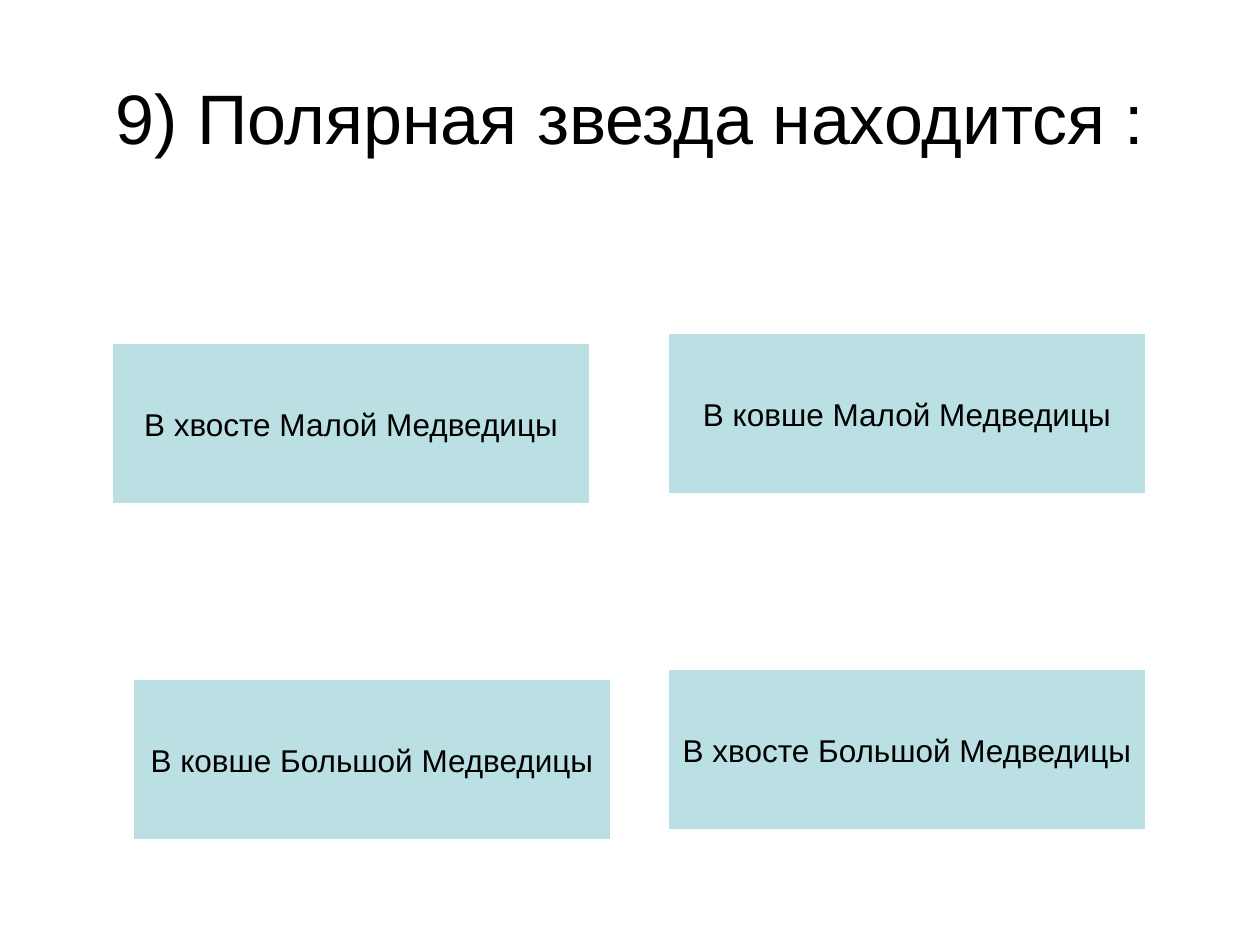
from pptx import Presentation
from pptx.dml.color import RGBColor
from pptx.enum.shapes import MSO_SHAPE
from pptx.enum.text import MSO_ANCHOR, PP_ALIGN
from pptx.util import Emu, Pt

BUTTON = MSO_SHAPE.ACTION_BUTTON_CUSTOM
MIDDLE = MSO_ANCHOR.MIDDLE
CENTER = PP_ALIGN.CENTER

PX = 914400 // 126
SLIDE_SIZE = (1260, 945)
COLORS = {"text": "000000", "button": "BBE0E3", "background": "FFFFFF"}

QUESTION = "9) Полярная звезда находится :"
QUESTION_BOX = (63, 38, 1134, 158)
ANSWER_SIZE = (476, 159)
ANSWERS = [  # text, left, top
    ("В ковше Малой Медведицы", 669, 334),
    ("В хвосте Большой Медведицы", 669, 670),
    ("В ковше Большой Медведицы", 134, 680),
    ("В хвосте Малой Медведицы", 113, 344),
]


def px(*lengths):
    """Turn px lengths into EMU."""
    return [Emu(length * PX) for length in lengths]


def color(name):
    return RGBColor.from_string(COLORS[name])


def write(shape, text, points, wrap):
    frame = shape.text_frame
    frame.word_wrap = wrap
    frame.vertical_anchor = MIDDLE
    paragraph = frame.paragraphs[0]
    paragraph.alignment = CENTER
    run = paragraph.add_run()
    run.text = text
    for attribute, value in {"name": "Arial", "size": Pt(points)}.items():
        setattr(run.font, attribute, value)
    run.font.color.rgb = color("text")


def add_answer(slide, text, left, top):
    button = slide.shapes.add_shape(BUTTON, *px(left, top, *ANSWER_SIZE))
    button.shadow.inherit = False
    button.fill.solid()
    button.fill.fore_color.rgb = color("button")
    button.line.fill.background()
    write(button, text, 18, wrap=False)


def main():
    deck = Presentation()
    deck.slide_width, deck.slide_height = px(*SLIDE_SIZE)
    slide = deck.slides.add_slide(deck.slide_layouts[6])
    slide.background.fill.solid()
    slide.background.fill.fore_color.rgb = color("background")

    write(slide.shapes.add_textbox(*px(*QUESTION_BOX)), QUESTION, 40, wrap=True)
    for answer in ANSWERS:
        add_answer(slide, *answer)
    deck.save("out.pptx")


if __name__ == "__main__":
    main()
